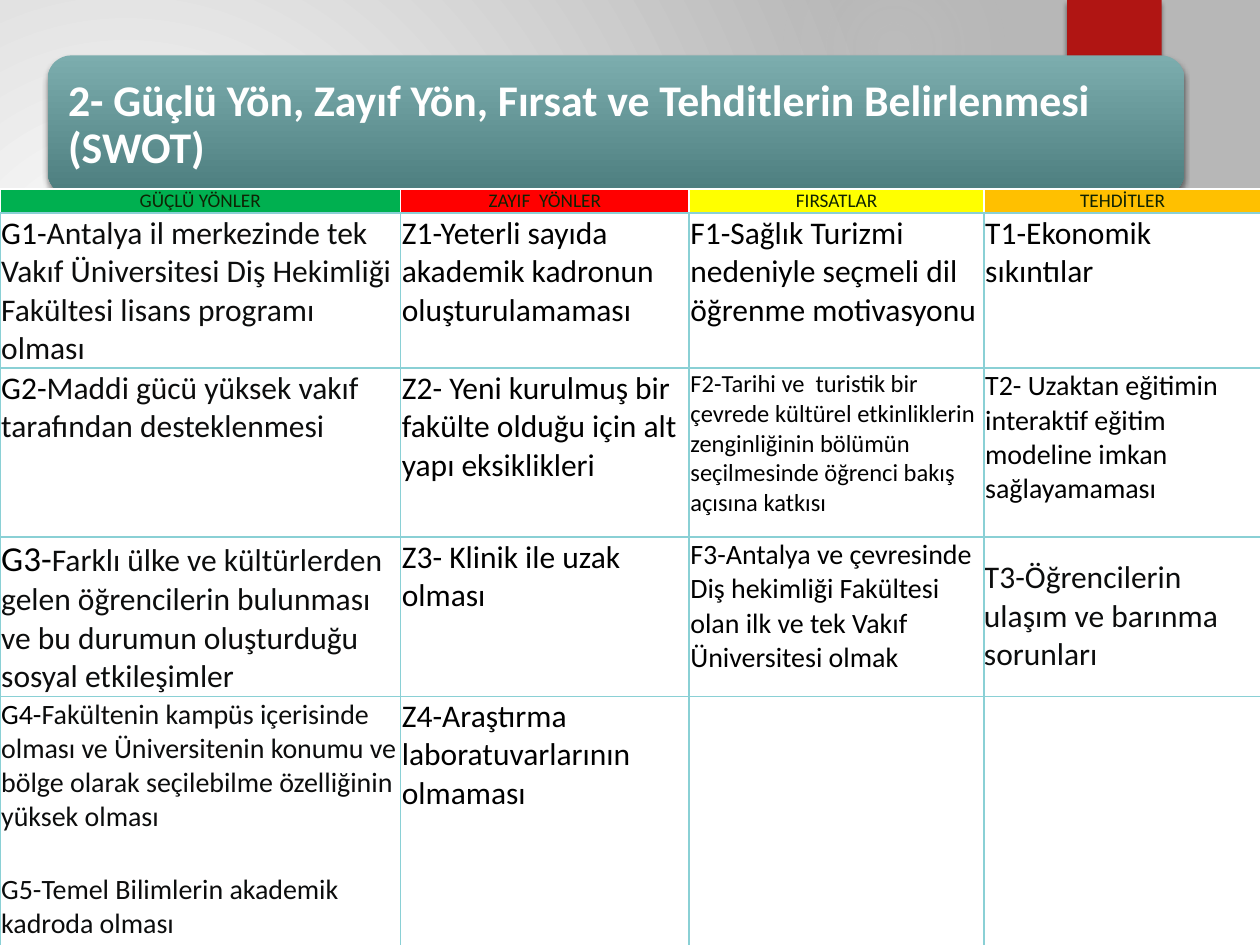
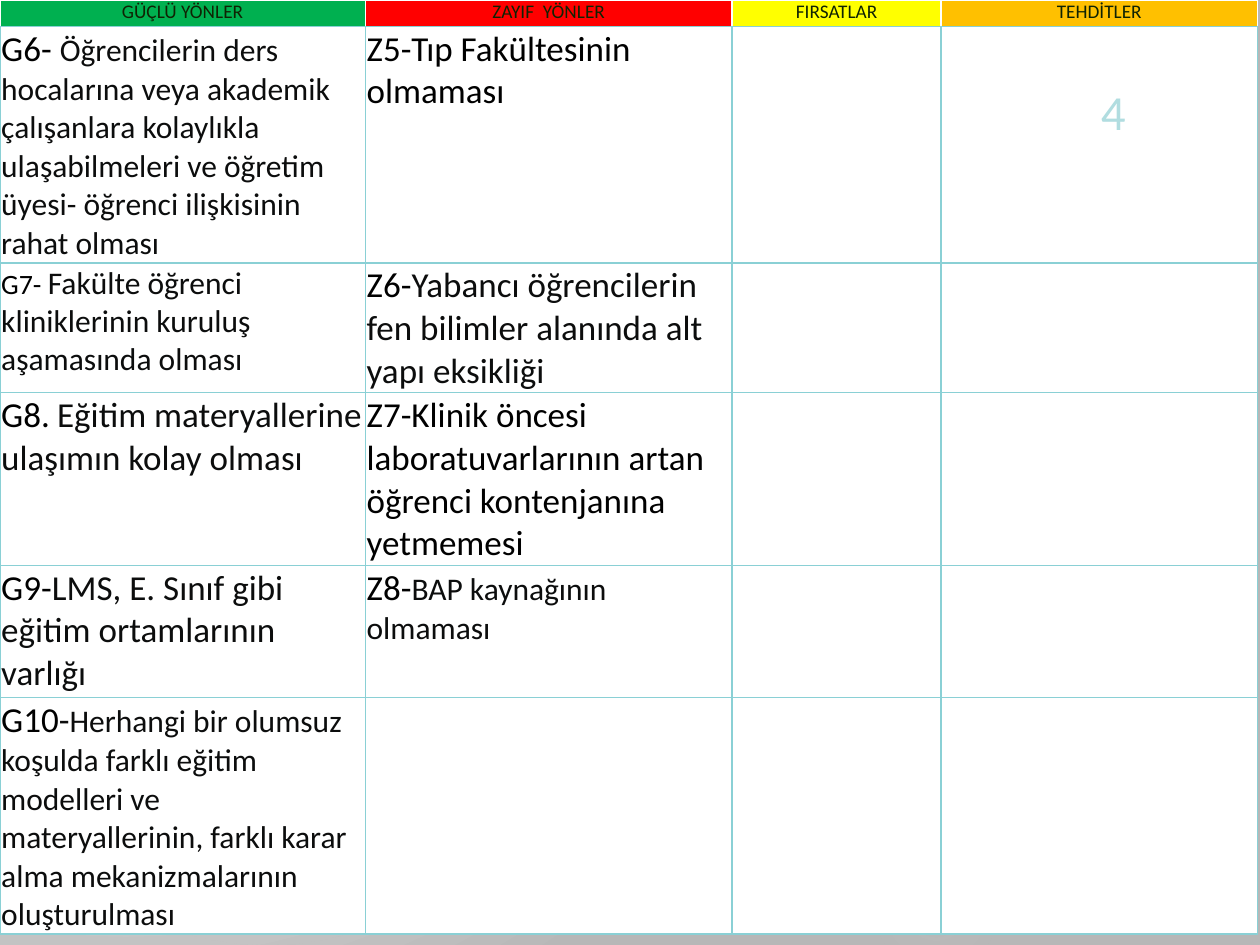
import dataclasses

import pptx
import pptx.dml.color
import pptx.enum.shapes
import pptx.enum.text
import pptx.oxml
import pptx.oxml.ns
import pptx.util

SHAPE = pptx.enum.shapes.MSO_SHAPE
ANCHOR = pptx.enum.text.MSO_ANCHOR
ALIGN = pptx.enum.text.PP_ALIGN
NAMESPACE = pptx.oxml.ns.nsdecls("a")


@dataclasses.dataclass(frozen=True)
class Theme:
    width: float = 10
    height: float = 7.5
    columns: int = 100
    rows: int = 75
    font: str = "Calibri"
    white: str = "FFFFFF"
    black: str = "000000"
    ink: str = "0C0D0D"
    header_ink: str = "0F2303"
    border: str = "8AD0D5"
    number: str = "B1DDE0"
    ribbon: str = "B01513"
    glow: str = "D9D9D9"
    backdrop_edge: str = "B7B7B7"
    band_top: str = "7CADAE"
    band_bottom: str = "4C7D7E"
    header_size: int = 11
    small: int = 14
    medium: int = 16
    normal: int = 18
    large: int = 20
    title_size: int = 25
    number_size: int = 28


THEME = Theme()
CENTER = (50, 50, 50, 50)
HEADERS = (
    ("GÜÇLÜ YÖNLER", "00B050"),
    ("ZAYIF  YÖNLER", "FF0000"),
    ("FIRSATLAR", "FFFF00"),
    ("TEHDİTLER", "FFC000"),
)
GLOWS = (
    (68.9, 18.3, 30.8, ((0, 7), (36, 6), (69, 0))),
    (62.2, -5, 17.5, ((0, 14), (36, 7), (73, 0))),
    (68.9, 66.7, 10.8, ((0, 9), (36, 5), (66, 0))),
    (-1.7, 29.2, 45.8, ((0, 11), (36, 10), (75, 0))),
    (-9.2, 31.7, 25.8, ((0, 8), (36, 8), (72, 0))),
)


def across(columns):
    return pptx.util.Inches(columns * THEME.width / THEME.columns)


def down(rows):
    return pptx.util.Inches(rows * THEME.height / THEME.rows)


def area(left, top, width, height):
    return across(left), down(top), across(width), down(height)


def rgb(color):
    return pptx.dml.color.RGBColor.from_string(color)


def dark(text, size=THEME.normal):
    return text, size, THEME.black


def soft(text, size=THEME.normal):
    return text, size, THEME.ink


def paint_gradient(fill, element, stops, target=None, angle=90):
    fill.gradient()
    marks = "".join(
        f'<a:gs pos="{position * 1000}"><a:srgbClr val="{color}">'
        f'<a:alpha val="{alpha * 1000}"/></a:srgbClr></a:gs>'
        for position, color, alpha in stops
    )
    direction = f'<a:lin ang="{angle * 60000}" scaled="0"/>'
    if target:
        sides = " ".join(f'{side}="{share * 1000}"' for side, share in zip("ltrb", target))
        direction = f'<a:path path="circle"><a:fillToRect {sides}/></a:path>'
    gradient = pptx.oxml.parse_xml(
        f'<a:gradFill {NAMESPACE} rotWithShape="1"><a:gsLst>{marks}</a:gsLst>{direction}</a:gradFill>'
    )
    plain = next(element.iter(pptx.oxml.ns.qn("a:gradFill")))
    plain.getparent().replace(plain, gradient)


def add_plain_shape(page, preset, place):
    shape = page.shapes.add_shape(preset, *place)
    shape.shadow.inherit = False
    shape.line.fill.background()
    return shape


def cast_shadow(shape):
    effects = next(shape.element.iter(pptx.oxml.ns.qn("a:effectLst")))
    effects.append(pptx.oxml.parse_xml(
        f'<a:outerShdw {NAMESPACE} blurRad="{pptx.util.Pt(3)}" dist="{pptx.util.Pt(2)}" '
        f'dir="5400000" rotWithShape="0"><a:srgbClr val="{THEME.black}">'
        '<a:alpha val="45000"/></a:srgbClr></a:outerShdw>'
    ))


def add_backdrop(page):
    stops = ((0, THEME.white, 100), (100, THEME.backdrop_edge, 100))
    paint_gradient(page.background.fill, page.element, stops, (45, 65, 125, 100))
    for left, top, size, fades in GLOWS:
        glow = add_plain_shape(page, SHAPE.OVAL, area(left, top, size, size))
        stops = [(position, THEME.glow, alpha) for position, alpha in fades]
        paint_gradient(glow.fill, glow.element, stops, CENTER)
    ribbon = add_plain_shape(page, SHAPE.RECTANGLE, area(84.7, 0, 7.5, 12))
    ribbon.fill.solid()
    ribbon.fill.fore_color.rgb = rgb(THEME.ribbon)
    cast_shadow(ribbon)


def write_para(para, spans, align=ALIGN.LEFT, bold=False):
    para.alignment = align
    for text, size, color in spans:
        span = para.add_run()
        span.text = text
        span.font.name = THEME.font
        span.font.size = pptx.util.Pt(size)
        span.font.bold = bold
        span.font.color.rgb = rgb(color)


def add_title_band(page, text):
    band = add_plain_shape(page, SHAPE.ROUNDED_RECTANGLE, area(3.8, 4.4, 90.2, 11.1))
    stops = ((0, THEME.band_top, 100), (100, THEME.band_bottom, 100))
    paint_gradient(band.fill, band.element, stops)
    cast_shadow(band)
    title = page.shapes.title
    title.left, title.top, title.width, title.height = area(4.4, 5, 89.1, 10)
    title.element.getparent().append(title.element)
    box = title.text_frame
    box.word_wrap = True
    box.auto_size = pptx.enum.text.MSO_AUTO_SIZE.NONE
    box.vertical_anchor = ANCHOR.MIDDLE
    box.margin_left = box.margin_right = across(1)
    box.margin_top = box.margin_bottom = down(1)
    para = box.paragraphs[0]
    para.line_spacing = 0.9
    write_para(para, [(text, THEME.title_size, THEME.white)], bold=True)


def style_cell(cell, color, edges, margin):
    cell.fill.solid()
    cell.fill.fore_color.rgb = rgb(color)
    cell.margin_left = cell.margin_right = across(margin)
    cell.margin_top = down(margin)
    cell.margin_bottom = 0
    properties = cell._tc.get_or_add_tcPr()
    for position, (side, edge) in enumerate(zip("LRTB", edges)):
        properties.insert(position, pptx.oxml.parse_xml(
            f'<a:ln{side} {NAMESPACE} w="{pptx.util.Pt(1)}"><a:solidFill>'
            f'<a:srgbClr val="{edge}"/></a:solidFill></a:ln{side}>'
        ))


def add_swot_table(page, top, widths, heights, entries):
    frame = page.shapes.add_table(
        len(heights), len(widths), *area(0, top, sum(widths), sum(heights))
    )
    table = frame.table
    table.first_row = table.horz_banding = False
    for column, width in zip(table.columns, widths):
        column.width = across(width)
    for row, height in zip(table.rows, heights):
        row.height = down(height)
    for column, (text, color) in enumerate(HEADERS):
        cell = table.cell(0, column)
        style_cell(cell, color, [THEME.white] * 3 + [THEME.border], 0)
        header = [(text, THEME.header_size, THEME.header_ink)]
        write_para(cell.text_frame.paragraphs[0], header, ALIGN.CENTER)
    for row, row_entries in enumerate(entries, 1):
        for column in range(len(widths)):
            cell = table.cell(row, column)
            style_cell(cell, THEME.white, [THEME.border] * 4, 0.1)
            if column < len(row_entries):
                write_para(cell.text_frame.paragraphs[0], row_entries[column])
    return table


def add_page_number(page, text):
    box = page.shapes.add_textbox(*area(84.9, 3.2, 6.9, 8.4)).text_frame
    box.word_wrap = True
    box.vertical_anchor = ANCHOR.BOTTOM
    write_para(box.paragraphs[0], [(text, THEME.number_size, THEME.number)], ALIGN.CENTER)


def build_first_page(deck):
    page = deck.slides.add_slide(deck.slide_layouts[5])
    add_backdrop(page)
    add_title_band(page, "2- Güçlü Yön, Zayıf Yön, Fırsat ve Tehditlerin Belirlenmesi (SWOT)")
    entries = (
        (
            [dark("G1-"), soft("Antalya il merkezinde tek Vakıf Üniversitesi Diş Hekimliği "
                               "Fakültesi lisans programı olması")],
            [dark("Z1-Yeterli sayıda akademik kadronun oluşturulamaması")],
            [dark("F1-Sağlık Turizmi nedeniyle seçmeli dil öğrenme motivasyonu")],
            [dark("T1-Ekonomik sıkıntılar")],
        ),
        (
            [dark("G2-"), soft("Maddi gücü yüksek vakıf tarafından desteklenmesi")],
            [dark("Z2- Yeni kurulmuş bir fakülte olduğu için alt yapı eksiklikleri")],
            [dark("F2-Tarihi ve  turistik bir çevrede kültürel etkinliklerin zenginliğinin "
                  "bölümün seçilmesinde öğrenci bakış açısına katkısı", THEME.small)],
            [dark("T2- Uzaktan eğitimin interaktif eğitim modeline imkan sağlayamaması",
                  THEME.medium)],
        ),
        (
            [dark("G3-", THEME.large),
             soft("Farklı ülke ve kültürlerden gelen öğrencilerin bulunması ve bu durumun "
                  "oluşturduğu sosyal etkileşimler")],
            [dark("Z3- Klinik ile uzak olması")],
            [dark("F3-Antalya ve çevresinde Diş hekimliği Fakültesi olan ilk ve tek Vakıf "
                  "Üniversitesi olmak", THEME.medium)],
            [soft("T3-Öğrencilerin ulaşım ve barınma sorunları")],
        ),
        (
            [dark("G4-", THEME.medium),
             soft("Fakültenin kampüs içerisinde olması ve Üniversitenin konumu ve bölge "
                  "olarak seçilebilme özelliğinin yüksek olması", THEME.medium)],
            [dark("Z4-Araştırma laboratuvarlarının olmaması")],
        ),
    )
    table = add_swot_table(
        page, 15, (31.8, 22.9, 23.4, 22), (1.9, 11.5, 13.4, 12.1, 25.8), entries
    )
    transport = table.cell(3, 3)
    transport.vertical_anchor = ANCHOR.MIDDLE
    transport.margin_left = transport.margin_right = transport.margin_top = 0
    sciences = table.cell(4, 0).text_frame.add_paragraph()
    sciences.space_before = pptx.util.Pt(22)
    write_para(sciences, [soft("G5-Temel Bilimlerin akademik kadroda olması", THEME.medium)])


def build_second_page(deck):
    page = deck.slides.add_slide(deck.slide_layouts[6])
    add_backdrop(page)
    entries = (
        (
            [dark("G6- ", THEME.large),
             soft("Öğrencilerin ders hocalarına veya akademik çalışanlara kolaylıkla "
                  "ulaşabilmeleri ve öğretim üyesi- öğrenci ilişkisinin rahat olması")],
            [dark("Z5-Tıp Fakültesinin olmaması", THEME.large)],
        ),
        (
            [dark("G7- ", THEME.medium),
             soft("Fakülte öğrenci kliniklerinin kuruluş aşamasında olması")],
            [dark("Z6-", THEME.large),
             soft("Yabancı öğrencilerin fen bilimler alanında alt yapı eksikliği", THEME.large)],
        ),
        (
            [dark("G8.", THEME.large), (" ", THEME.normal, THEME.border),
             soft("Eğitim materyallerine ulaşımın kolay olması", THEME.large)],
            [dark("Z7-Klinik öncesi laboratuvarlarının artan öğrenci kontenjanına yetmemesi",
                  THEME.large)],
        ),
        (
            [dark("G9-", THEME.large),
             soft("LMS, E. Sınıf gibi eğitim ortamlarının varlığı", THEME.large)],
            [dark("Z8-", THEME.large), soft("BAP kaynağının olmaması")],
        ),
        (
            [dark("G10", THEME.large), soft("-", THEME.large),
             soft("Herhangi bir olumsuz koşulda farklı eğitim modelleri ve materyallerinin, "
                  "farklı karar alma mekanizmalarının oluşturulması")],
        ),
    )
    add_swot_table(
        page, 0, (29, 29.1, 16.6, 25.1), (2.1, 18.7, 10.1, 13, 10.5, 17.8), entries
    )
    add_page_number(page, "4")


def main():
    deck = pptx.Presentation()
    deck.slide_width = across(THEME.columns)
    deck.slide_height = down(THEME.rows)
    build_first_page(deck)
    build_second_page(deck)
    deck.save("out.pptx")


if __name__ == "__main__":
    main()
